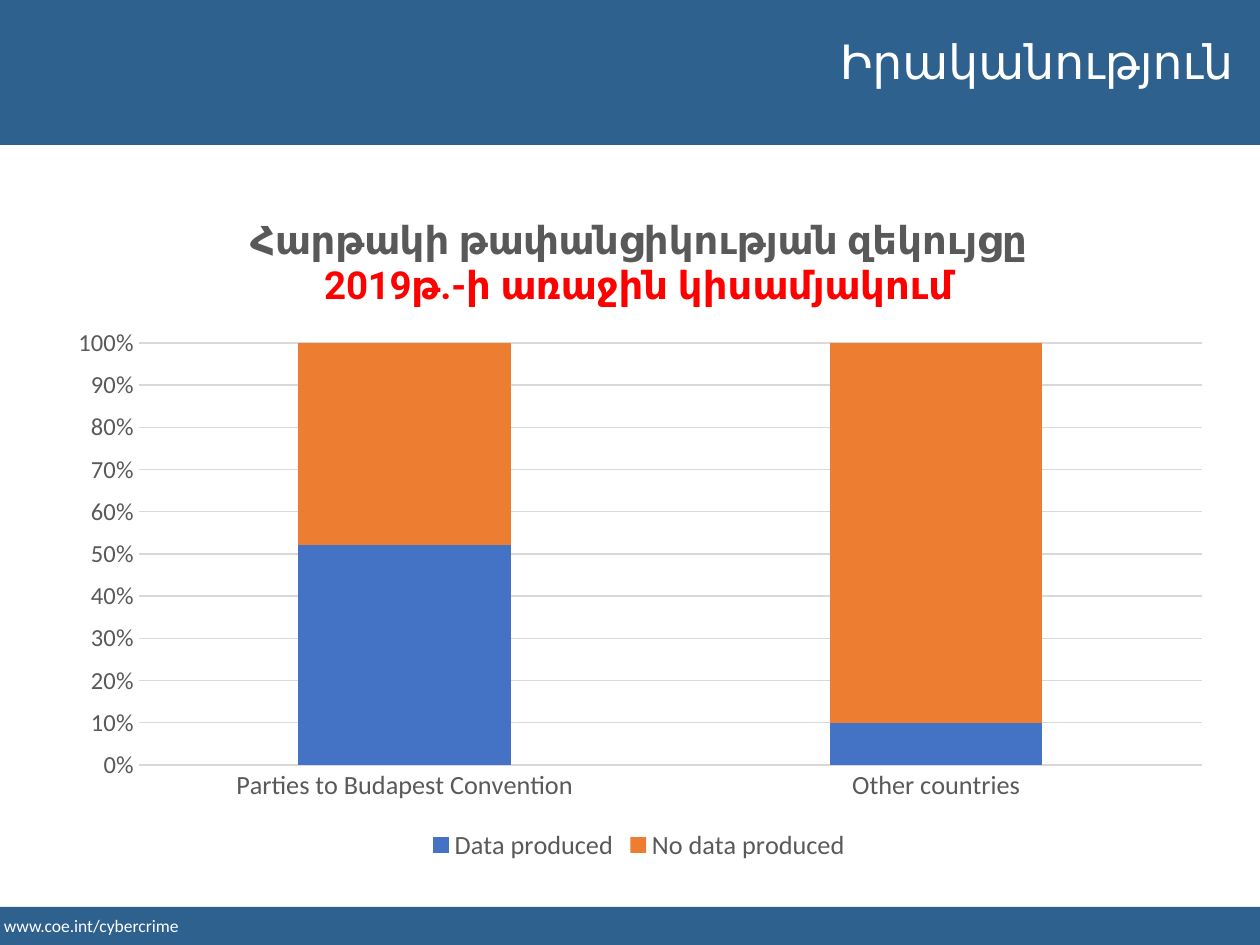
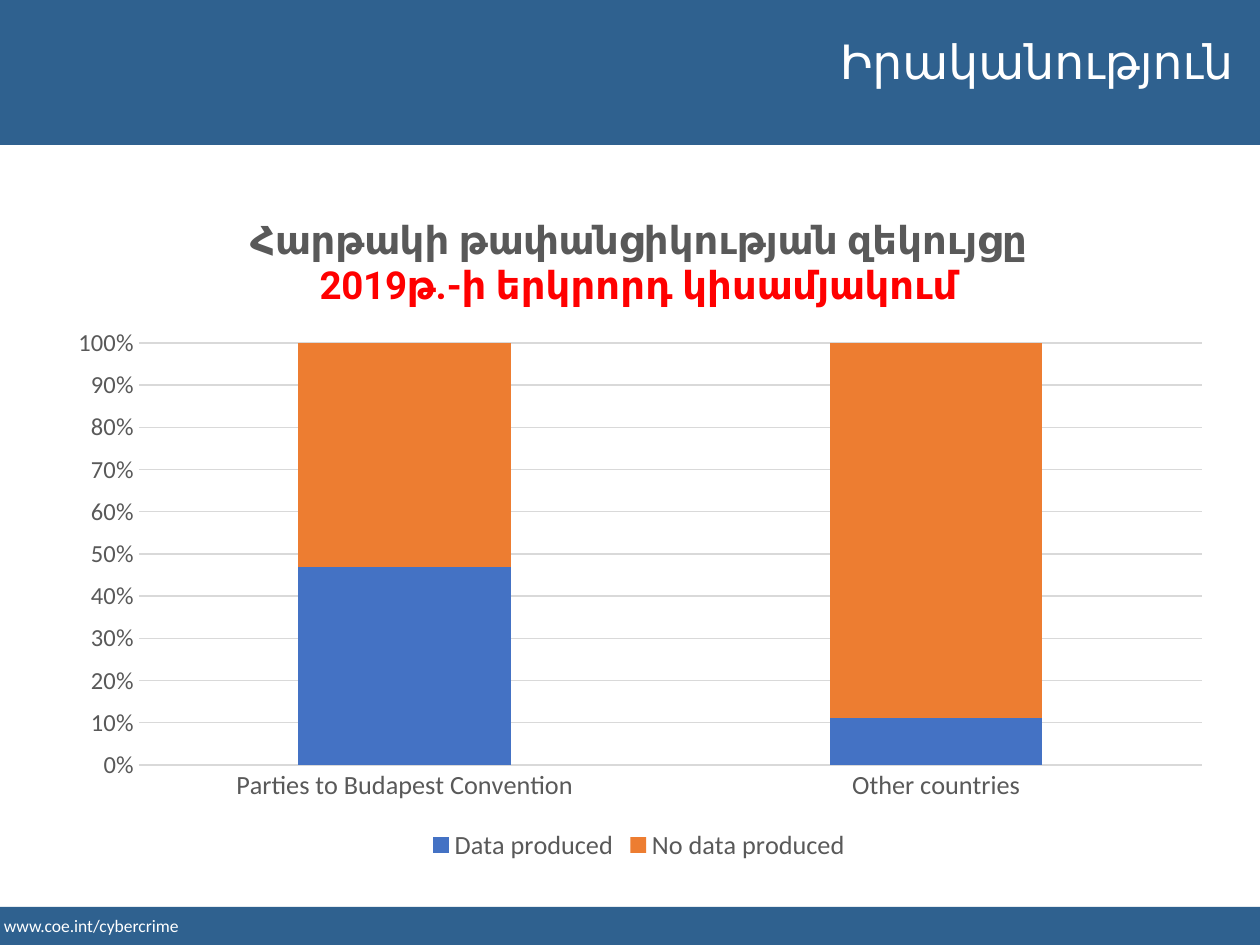
from lxml.etree import SubElement
from pptx import Presentation
from pptx.chart.data import CategoryChartData
from pptx.dml.color import RGBColor
from pptx.enum.chart import XL_CHART_TYPE, XL_LEGEND_POSITION, XL_TICK_MARK
from pptx.enum.shapes import MSO_SHAPE
from pptx.enum.text import MSO_ANCHOR, MSO_AUTO_SIZE, PP_ALIGN
from pptx.oxml.ns import qn
from pptx.util import Emu, Pt

PX = 914400 // 126
SLIDE_WIDTH, SLIDE_HEIGHT = 1260, 945
HEADER_HEIGHT, FOOTER_TOP = 145, 907
CHART_BOX = (54, 193, 1170, 673)
PLOT_BOX = (139, 343, 1063, 422)

BAND_BLUE = RGBColor(0x2F, 0x61, 0x8F)
WHITE = RGBColor(0xFF, 0xFF, 0xFF)
BLACK = RGBColor(0x00, 0x00, 0x00)
TEXT_GREY = RGBColor(0x59, 0x59, 0x59)
GRID_GREY = RGBColor(0xD9, 0xD9, 0xD9)
PERIOD_RED = RGBColor(0xFF, 0x00, 0x00)
SERIES_COLOURS = (RGBColor(0x44, 0x72, 0xC4), RGBColor(0xED, 0x7D, 0x31))

BODY_FONT, TITLE_FONT = "Calibri", "Roboto"
TITLE = "Իրականություն"
FOOTER = "www.coe.int/cybercrime"
REPORT = "Հարթակի թափանցիկության զեկույցը"
CATEGORIES = ("Parties to Budapest Convention", "Other countries")
SERIES_NAMES = ("Data produced", "No data produced")

FIRST_HALF = [
    [(REPORT, TEXT_GREY)],
    [("2019թ.-ի առաջին կիսամյակում", PERIOD_RED)],
]
SECOND_HALF = [
    [(REPORT + " ", TEXT_GREY), ("2019թ.-ի երկրորդ կիսամյակում", PERIOD_RED)],
]


def scaled(*lengths):
    """Turn pixel lengths into EMU."""
    return [Emu(length * PX) for length in lengths]


def style_font(font, name, size, colour, bold=False):
    """Set the face, size, colour and weight of a font."""
    font.name, font.size, font.bold = name, Pt(size), bold
    font.color.rgb = colour


def add_band(slide, top, height):
    """Draw a full-width band behind the title."""
    band = slide.shapes.add_shape(
        MSO_SHAPE.RECTANGLE, *scaled(0, top, SLIDE_WIDTH, height))
    band.shadow.inherit = False
    band.fill.solid()
    band.fill.fore_color.rgb = BAND_BLUE
    band.line.fill.background()
    slide.shapes.title.element.addprevious(band.element)


def add_footer(slide):
    """Write the web address on the lower band."""
    box = slide.shapes.add_textbox(*scaled(0, 908, 444, 36))
    frame = box.text_frame
    frame.word_wrap = True
    frame.vertical_anchor = MSO_ANCHOR.MIDDLE
    frame.margin_left = Emu(4 * PX)
    frame.text = FOOTER
    style_font(frame.paragraphs[0].runs[0].font, BODY_FONT, 10, WHITE)


def set_title(slide):
    """Place and format the title placeholder."""
    title = slide.shapes.title
    title.left, title.top, title.width, title.height = scaled(174, 25, 1072, 72)
    frame = title.text_frame
    frame.text = TITLE
    frame.auto_size = MSO_AUTO_SIZE.NONE
    frame.vertical_anchor = MSO_ANCHOR.MIDDLE
    para = frame.paragraphs[0]
    para.alignment = PP_ALIGN.RIGHT
    style_font(para.runs[0].font, TITLE_FONT, 27, WHITE)


def set_chart_title(chart, lines):
    """Write the chart title, one paragraph per line of coloured spans."""
    chart.has_title = True
    frame = chart.chart_title.text_frame
    for index, line in enumerate(lines):
        para = frame.add_paragraph() if index else frame.paragraphs[0]
        for text, colour in line:
            span = para.add_run()
            span.text = text
            style_font(span.font, TITLE_FONT, 22, colour, bold=True)


def place_plot(chart):
    """Fix the inner plot area inside the chart."""
    plot_area = chart.plots[0]._element.getparent()
    for old_layout in plot_area.findall(qn("c:layout")):
        plot_area.remove(old_layout)
    layout = SubElement(plot_area, qn("c:layout"))
    plot_area.insert(0, layout)
    manual = SubElement(layout, qn("c:manualLayout"))
    left, top, width, height = CHART_BOX
    plot_left, plot_top, plot_width, plot_height = PLOT_BOX
    settings = {
        "layoutTarget": "inner", "xMode": "edge", "yMode": "edge",
        "x": (plot_left - left) / width, "y": (plot_top - top) / height,
        "w": plot_width / width, "h": plot_height / height,
    }
    for name, value in settings.items():
        SubElement(manual, qn(f"c:{name}")).set("val", str(value))


def style_axis(axis, size):
    """Remove tick marks and set the label font of an axis."""
    axis.major_tick_mark = axis.minor_tick_mark = XL_TICK_MARK.NONE
    style_font(axis.tick_labels.font, BODY_FONT, size, TEXT_GREY)


def style_line(line):
    """Draw a thin grey line."""
    line.color.rgb = GRID_GREY
    line.width = Pt(0.75)


def add_report_chart(slide, heading, produced):
    """Add the stacked chart of the shares of requests with data produced."""
    data = CategoryChartData()
    data.categories = CATEGORIES
    missing = [100 - share for share in produced]
    for name, values in zip(SERIES_NAMES, (produced, missing)):
        data.add_series(name, values)
    chart = slide.shapes.add_chart(
        XL_CHART_TYPE.COLUMN_STACKED_100, *scaled(*CHART_BOX), data).chart
    style_font(chart.font, BODY_FONT, 10, BLACK)
    set_chart_title(chart, heading)
    place_plot(chart)

    plot = chart.plots[0]
    plot.gap_width, plot.overlap = 150, 100
    plot.vary_by_categories = False
    for series, colour in zip(plot.series, SERIES_COLOURS):
        series.format.fill.solid()
        series.format.fill.fore_color.rgb = colour

    style_axis(chart.category_axis, 15)
    style_line(chart.category_axis.format.line)
    value_axis = chart.value_axis
    style_axis(value_axis, 14)
    value_axis.format.line.fill.background()
    value_axis.tick_labels.number_format = "0%"
    value_axis.tick_labels.number_format_is_linked = False
    style_line(value_axis.major_gridlines.format.line)

    chart.has_legend = True
    chart.legend.position = XL_LEGEND_POSITION.BOTTOM
    chart.legend.include_in_layout = False
    style_font(chart.legend.font, BODY_FONT, 15, TEXT_GREY)


def add_report_slide(deck, heading, produced):
    """Add one slide with bands, title, footer and chart."""
    slide = deck.slides.add_slide(deck.slide_layouts.get_by_name("Title Only"))
    add_band(slide, 0, HEADER_HEIGHT)
    add_band(slide, FOOTER_TOP, SLIDE_HEIGHT - FOOTER_TOP)
    set_title(slide)
    add_footer(slide)
    add_report_chart(slide, heading, produced)


def main():
    """Build and save the deck."""
    deck = Presentation()
    deck.slide_width, deck.slide_height = scaled(SLIDE_WIDTH, SLIDE_HEIGHT)
    add_report_slide(deck, FIRST_HALF, (52, 10))
    add_report_slide(deck, SECOND_HALF, (47, 11))
    deck.save("out.pptx")


if __name__ == "__main__":
    main()
